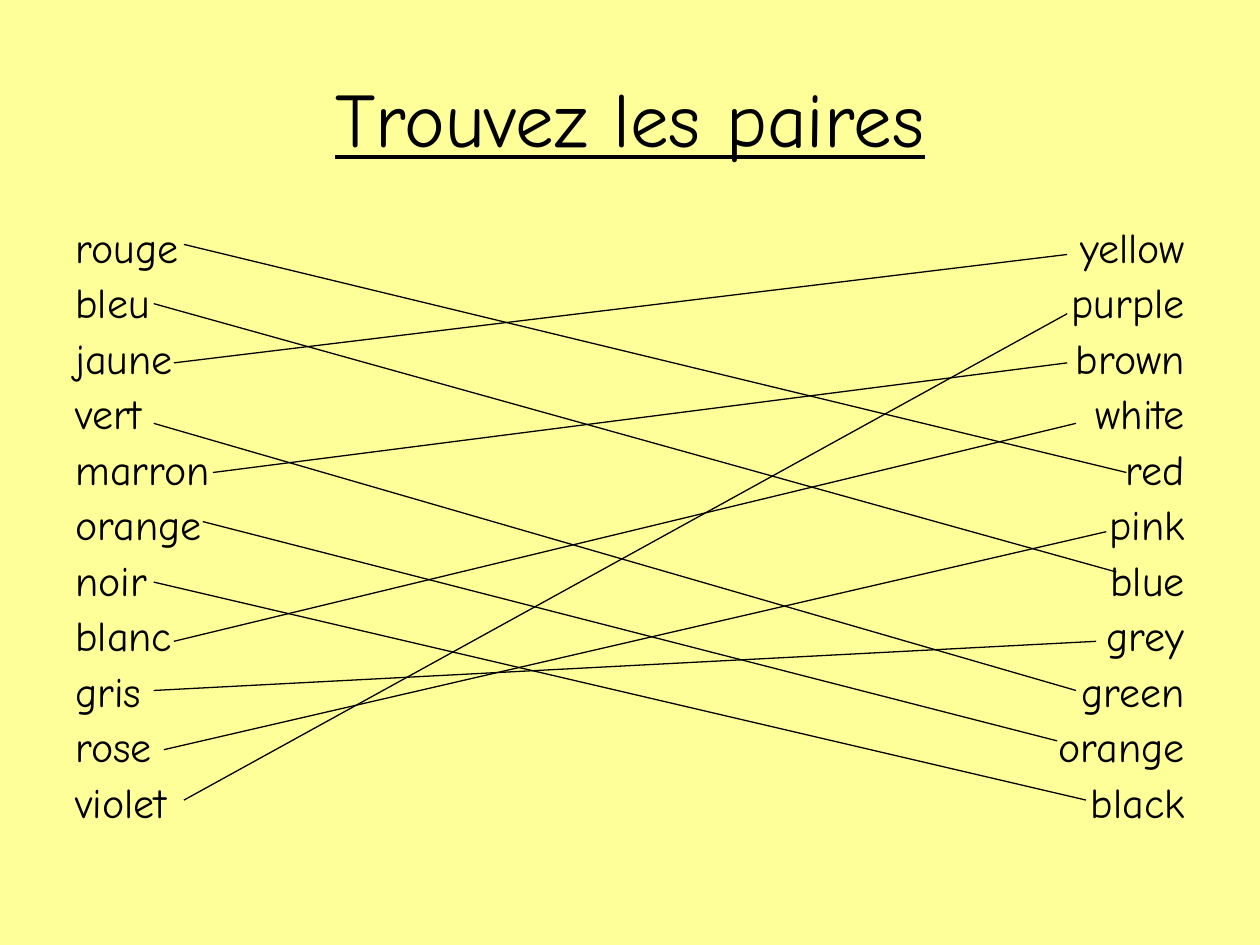
"""Build a French and English colour matching slide with its answer lines."""
from lxml import etree
from pptx import Presentation
from pptx.dml.color import RGBColor
from pptx.enum.shapes import MSO_CONNECTOR
from pptx.enum.text import MSO_ANCHOR, PP_ALIGN
from pptx.oxml.ns import qn
from pptx.util import Inches, Pt

STRAIGHT = MSO_CONNECTOR.STRAIGHT
TOP, MIDDLE = MSO_ANCHOR.TOP, MSO_ANCHOR.MIDDLE
LEFT, CENTER, RIGHT = PP_ALIGN.LEFT, PP_ALIGN.CENTER, PP_ALIGN.RIGHT

COLORS = {"paper": "FFFF99", "ink": "000000"}
FONT = "Comic Neue"
TITLE = "Trouvez les paires"
ENGLISH = ["yellow", "purple", "brown", "white", "red", "pink",
           "blue", "grey", "green", "orange", "black"]
MATCHES = [
    ("rouge", "red", (1.46, 1.94), (8.94, 3.75)),
    ("bleu", "blue", (1.22, 2.41), (8.86, 4.54)),
    ("jaune", "yellow", (1.38, 2.88), (8.47, 2.02)),
    ("vert", "green", (1.22, 3.36), (8.54, 5.48)),
    ("marron", "brown", (1.69, 3.75), (8.47, 2.88)),
    ("orange", "orange", (1.61, 4.14), (8.39, 5.88)),
    ("noir", "black", (1.22, 4.62), (8.62, 6.35)),
    ("blanc", "white", (1.38, 5.09), (8.54, 3.36)),
    ("gris", "grey", (1.22, 5.48), (8.7, 5.09)),
    ("rose", "pink", (1.3, 5.95), (8.78, 4.22)),
    ("violet", "purple", (1.46, 6.35), (8.47, 2.49)),
]
MARGIN, COLUMN_WIDTH = 0.5, 4.42
PAGE_WIDTH, PAGE_HEIGHT = 10, 7.5


def color(name):
    return RGBColor.from_string(COLORS[name])


def add_text(page, bounds, lines, size, align, anchor=TOP):
    box = page.shapes.add_textbox(*map(Inches, bounds))
    frame = box.text_frame
    frame.word_wrap = True
    frame.vertical_anchor = anchor
    frame.text = "\n".join(lines)
    for para in frame.paragraphs:
        para.alignment = align
        for span in para.runs:
            span.font.name = FONT
            span.font.size = Pt(size)
            span.font.color.rgb = color("ink")
    return frame


def add_words(page, left, words, align):
    frame = add_text(page, (left, 1.75, COLUMN_WIDTH, 4.95), words, 24, align)
    for para in frame.paragraphs:
        para.line_spacing = 0.9
        para.space_before = Pt(5.8)


def add_match_line(page, start, end):
    line = page.shapes.add_connector(STRAIGHT, *map(Inches, start + end))
    line.line.color.rgb = color("ink")
    line.line.width = Pt(0.75)
    etree.SubElement(line._element.spPr, qn("a:effectLst"))


def main():
    deck = Presentation()
    deck.slide_width, deck.slide_height = Inches(PAGE_WIDTH), Inches(PAGE_HEIGHT)
    page = deck.slides.add_slide(deck.slide_layouts[6])
    page.background.fill.solid()
    page.background.fill.fore_color.rgb = color("paper")

    title_bounds = (MARGIN, 0.3, PAGE_WIDTH - 2 * MARGIN, 1.25)
    title = add_text(page, title_bounds, [TITLE], 44, CENTER, MIDDLE)
    title.paragraphs[0].runs[0].font.underline = True

    french = [match[0] for match in MATCHES]
    add_words(page, MARGIN, french, LEFT)
    add_words(page, PAGE_WIDTH - MARGIN - COLUMN_WIDTH, ENGLISH, RIGHT)
    for _, _, start, end in MATCHES:
        add_match_line(page, start, end)

    deck.save("out.pptx")


if __name__ == "__main__":
    main()
